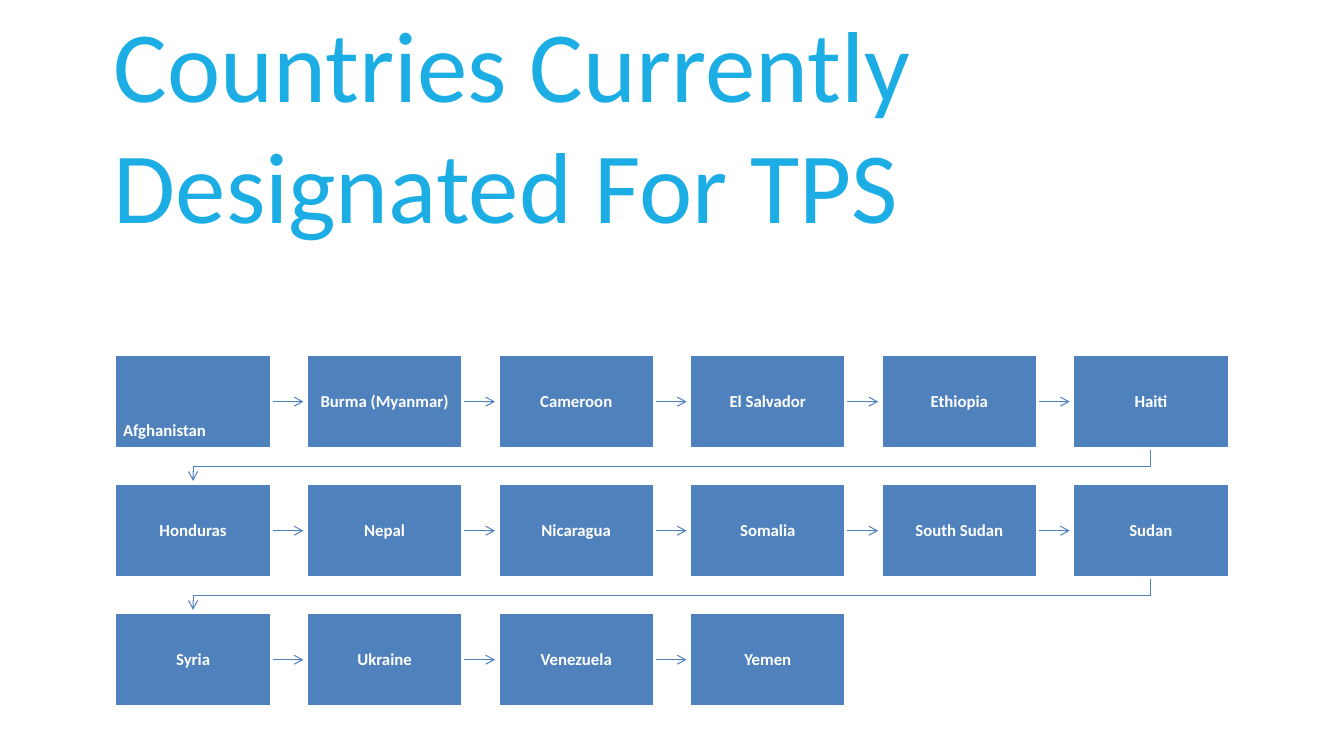
from dataclasses import dataclass

from lxml import etree
from pptx import Presentation, util as u
from pptx.dml.color import RGBColor
from pptx.enum import shapes, text
from pptx.oxml import ns


@dataclass(frozen=True)
class Theme:
    font: str = "Calibri"
    title_size: int = 72
    label_size: int = 12
    title: RGBColor = RGBColor(0x1C, 0xAD, 0xE4)
    box: RGBColor = RGBColor(0x4F, 0x81, 0xBD)
    white: RGBColor = RGBColor(0xFF, 0xFF, 0xFF)


@dataclass(frozen=True)
class Grid:
    """Boxes in rows, in inches; a step is one box and the gap after it."""
    columns: int = 6
    left: float = 1.14
    top: float = 3.52
    width: float = 1.55
    height: float = 0.93
    column_step: float = 1.9
    row_step: float = 1.28
    clearance: float = 0.03

    def corner(self, index):
        row, column = divmod(index, self.columns)
        return self.left + column * self.column_step, self.top + row * self.row_step

    def ends_row(self, index):
        return index % self.columns == self.columns - 1


THEME = Theme()
GRID = Grid()
TITLE = "Countries Currently Designated For TPS"
COUNTRIES = [
    "Afghanistan", "Burma (Myanmar)", "Cameroon", "El Salvador", "Ethiopia", "Haiti",
    "Honduras", "Nepal", "Nicaragua", "Somalia", "South Sudan", "Sudan",
    "Syria", "Ukraine", "Venezuela", "Yemen",
]
LABEL_CENTRED = {"align": text.PP_ALIGN.CENTER, "anchor": text.MSO_ANCHOR.MIDDLE}
LABEL_LOW_LEFT = {"align": text.PP_ALIGN.LEFT, "anchor": text.MSO_ANCHOR.BOTTOM}


def set_attributes(target, values):
    for name, value in values.items():
        setattr(target, name, value)


def write_text(shape, content, size, color, bold=False, inset=0.0,
               align=text.PP_ALIGN.LEFT, anchor=text.MSO_ANCHOR.TOP, spacing=1.0):
    margin = u.Inches(inset)
    frame = shape.text_frame
    set_attributes(frame, {
        "word_wrap": True, "vertical_anchor": anchor, "margin_left": margin,
        "margin_right": margin, "margin_top": margin, "margin_bottom": margin,
    })
    paragraph = frame.paragraphs[0]
    set_attributes(paragraph, {"text": content, "alignment": align, "line_spacing": spacing})
    set_attributes(paragraph.font, {"name": THEME.font, "size": u.Pt(size), "bold": bold})
    paragraph.font.color.rgb = color


def add_title(slide):
    box = slide.shapes.add_textbox(*map(u.Inches, (1.13, 0.02, 11.12, 2.42)))
    write_text(box, TITLE, THEME.title_size, THEME.title)


def add_country(slide, index, name):
    left, top = GRID.corner(index)
    box = slide.shapes.add_shape(
        shapes.MSO_SHAPE.RECTANGLE, *map(u.Inches, (left, top, GRID.width, GRID.height)))
    box.shadow.inherit = False
    box.fill.solid()
    box.fill.fore_color.rgb = THEME.box
    box.line.color.rgb = THEME.white
    box.line.width = u.Pt(2)
    layout = LABEL_LOW_LEFT if index == 0 else LABEL_CENTRED
    write_text(box, name, THEME.label_size, THEME.white, bold=True, inset=0.08,
               spacing=0.9, **layout)
    return box


def style_arrow(arrow):
    arrow.line.color.rgb = THEME.box
    arrow.line.width = u.Pt(0.75)
    etree.SubElement(arrow.line._get_or_add_ln(), ns.qn("a:tailEnd"), type="arrow")


def add_arrow_to_next(slide, box, index):
    left, top = GRID.corner(index)
    middle = u.Inches(top + GRID.height / 2)
    end = u.Inches(left + GRID.column_step - GRID.clearance)
    arrow = slide.shapes.add_connector(
        shapes.MSO_CONNECTOR.STRAIGHT, box.left + box.width, middle, end, middle)
    arrow.begin_connect(box, 3)
    style_arrow(arrow)
    etree.SubElement(arrow.element.spPr, ns.qn("a:effectLst"))
    return arrow


def add_arrow_to_next_row(slide, index):
    """Lead from the last box of a row back to the first box of the next."""
    left, top = GRID.corner(index)
    next_left, next_top = GRID.corner(index + 1)
    start_x, end_x = left + GRID.width / 2, next_left + GRID.width / 2
    bottom = top + GRID.height
    turn = (bottom + next_top) / 2
    points = [(start_x, turn), (end_x, turn), (end_x, next_top - GRID.clearance)]
    builder = slide.shapes.build_freeform(u.Inches(start_x), u.Inches(bottom))
    builder.add_line_segments([(u.Inches(x), u.Inches(y)) for x, y in points], close=False)
    arrow = builder.convert_to_shape()
    arrow.shadow.inherit = False
    arrow.fill.background()
    style_arrow(arrow)
    return arrow


def add_country_flow(slide):
    for index, name in enumerate(COUNTRIES):
        box = add_country(slide, index, name)
        if index == len(COUNTRIES) - 1:
            continue
        if GRID.ends_row(index):
            arrow = add_arrow_to_next_row(slide, index)
        else:
            arrow = add_arrow_to_next(slide, box, index)
        # The white border of the box covers the start of its arrow.
        box.element.addprevious(arrow.element)


def main():
    presentation = Presentation()
    set_attributes(presentation, {"slide_width": u.Inches(13.33), "slide_height": u.Inches(7.5)})
    slide = presentation.slides.add_slide(presentation.slide_layouts[6])
    add_title(slide)
    add_country_flow(slide)
    presentation.save("out.pptx")


if __name__ == "__main__":
    main()
